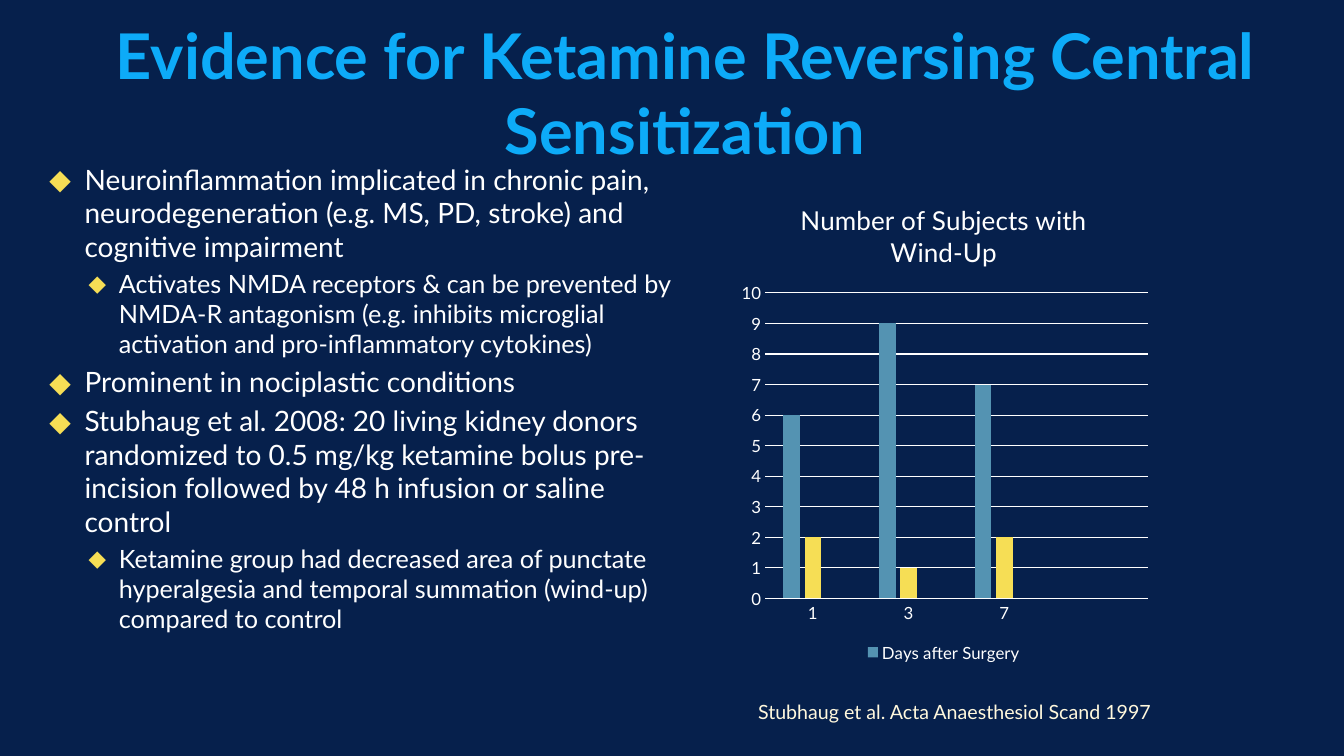
from dataclasses import dataclass

from lxml import etree
from pptx import Presentation
from pptx.chart.data import CategoryChartData
from pptx.dml.color import RGBColor
from pptx.enum import chart as ch, text as tx
from pptx.oxml import parse_xml
from pptx.oxml.ns import nsdecls, qn
from pptx.util import Inches, Pt

FONT = "Lato"
NAVY, SKY, WHITE, CREAM, YELLOW = "06204C", "0DABF8", "FFFFFF", "FFF8DD", "F6DE55"


@dataclass
class Level:
    size: float
    margin: float
    hanging: float
    bullet_pct: int


@dataclass
class Bullet:
    level: int
    text: str


@dataclass
class Series:
    name: str
    values: tuple
    color: str


LEVELS = [Level(20, 0.35, 0.35, 100), Level(18, 0.69, 0.3, 90)]
BULLETS = [
    Bullet(0, "Neuroinflammation implicated in chronic pain, neurodegeneration "
              "(e.g. MS, PD, stroke) and cognitive impairment"),
    Bullet(1, "Activates NMDA receptors & can be prevented by NMDA-R antagonism "
              "(e.g. inhibits microglial activation and pro-inflammatory cytokines)"),
    Bullet(0, "Prominent in nociplastic conditions"),
    Bullet(0, "Stubhaug et al. 2008: 20 living kidney donors randomized to 0.5 mg/kg "
              "ketamine bolus pre-incision followed by 48 h infusion or saline control"),
    Bullet(1, "Ketamine group had decreased area of punctate hyperalgesia and temporal "
              "summation (wind-up) compared to control"),
]
DAYS = ["1", "3", "7", ""]
SERIES = [
    Series("Days after Surgery", (6, 9, 7, None), "5493B2"),
    Series("Series 2", (2, 1, 2, None), YELLOW),
    Series("Series 3", (None,) * 4, "387CEF"),
]


def rgb(color: str) -> RGBColor:
    return RGBColor.from_string(color)


def set_font(font, size: float, color: str = WHITE, bold: bool = False) -> None:
    font.name, font.size, font.bold = FONT, Pt(size), bold
    font.color.rgb = rgb(color)


def write(p, text: str, **fmt) -> None:
    r = p.add_run()
    r.text = text
    set_font(r.font, **fmt)


def add_title(s) -> None:
    sp = s.shapes.title
    sp.left, sp.top, sp.width, sp.height = map(Inches, (0.26, 0.48, 13.07, 0.86))
    tf = sp.text_frame
    tf.word_wrap, tf.auto_size = True, tx.MSO_AUTO_SIZE.NONE
    tf.vertical_anchor = tx.MSO_ANCHOR.MIDDLE
    tf.margin_left = tf.margin_right = 0
    tf.margin_top = tf.margin_bottom = Inches(0.01)
    p = tf.paragraphs[0]
    p.alignment = tx.PP_ALIGN.CENTER
    write(p, "Evidence for Ketamine Reversing Central Sensitization",
          size=45, color=SKY, bold=True)


def set_bullet(p, level: Level) -> None:
    pPr = p._p.get_or_add_pPr()
    pPr.set("marL", str(Inches(level.margin)))
    pPr.set("indent", str(-Inches(level.hanging)))
    color = etree.SubElement(pPr, qn("a:buClr"))
    etree.SubElement(color, qn("a:srgbClr"), val=YELLOW)
    etree.SubElement(pPr, qn("a:buSzPct"), val=str(level.bullet_pct * 1000))
    etree.SubElement(pPr, qn("a:buFont"), typeface=FONT)
    etree.SubElement(pPr, qn("a:buChar"), char="◆")


def add_bullets(s) -> None:
    tf = s.shapes.add_textbox(*map(Inches, (0.39, 1.56, 6.45, 5.36))).text_frame
    tf.word_wrap = True
    for i, bullet in enumerate(BULLETS):
        level = LEVELS[bullet.level]
        p = tf.add_paragraph() if i else tf.paragraphs[0]
        p.level = bullet.level
        if i:
            p.space_before = Pt(level.size * 0.2)
        set_bullet(p, level)
        write(p, bullet.text, size=level.size)


def set_plot_layout(chart, x: float, y: float, w: float, h: float) -> None:
    """Fix the inner plot area, in fractions of the chart."""
    area = chart._chartSpace.chart.plotArea
    for old in area.findall(qn("c:layout")):
        area.remove(old)
    area.insert(0, parse_xml(
        f'<c:layout {nsdecls("c")}><c:manualLayout><c:layoutTarget val="inner"/>'
        '<c:xMode val="edge"/><c:yMode val="edge"/>'
        f'<c:x val="{x}"/><c:y val="{y}"/><c:w val="{w}"/><c:h val="{h}"/>'
        '</c:manualLayout></c:layout>'))


def hide_legend_entries(legend, *indexes: int) -> None:
    position = legend._element.find(qn("c:legendPos"))
    for i in reversed(indexes):
        position.addnext(parse_xml(
            f'<c:legendEntry {nsdecls("c")}><c:idx val="{i}"/>'
            '<c:delete val="1"/></c:legendEntry>'))


def add_chart(s) -> None:
    data = CategoryChartData()
    data.categories = DAYS
    for series in SERIES:
        data.add_series(series.name, series.values)
    chart = s.shapes.add_chart(ch.XL_CHART_TYPE.COLUMN_CLUSTERED,
                               *map(Inches, (7.25, 1.8, 4.22, 4.81)), data).chart
    set_font(chart.font, 10)
    write(chart.chart_title.text_frame.paragraphs[0],
          "Number of Subjects with Wind-Up", size=18.6)
    chart.chart_title.include_in_layout = False
    set_plot_layout(chart, 0.08, 0.23, 0.9, 0.63)

    plot = chart.plots[0]
    plot.gap_width, plot.overlap, plot.vary_by_categories = 219, -27, False
    for drawn, series in zip(plot.series, SERIES):
        drawn.format.fill.solid()
        drawn.format.fill.fore_color.rgb = rgb(series.color)

    days, count = chart.category_axis, chart.value_axis
    for axis in (days, count):
        axis.major_tick_mark = axis.minor_tick_mark = ch.XL_TICK_MARK.NONE
        set_font(axis.tick_labels.font, 12)
    count.minimum_scale, count.maximum_scale, count.major_unit = 0, 10, 1
    count.format.line.fill.background()
    for line in (days.format.line, count.major_gridlines.format.line):
        line.color.rgb, line.width = rgb(WHITE), Pt(0.75)

    chart.has_legend = True
    chart.legend.position = ch.XL_LEGEND_POSITION.BOTTOM
    chart.legend.include_in_layout = False
    set_font(chart.legend.font, 12)
    hide_legend_entries(chart.legend, 1, 2)


def add_citation(s) -> None:
    tf = s.shapes.add_textbox(*map(Inches, (7.42, 6.89, 4.18, 0.34))).text_frame
    tf.word_wrap, tf.auto_size = False, tx.MSO_AUTO_SIZE.SHAPE_TO_FIT_TEXT
    write(tf.paragraphs[0], "Stubhaug et al. Acta Anaesthesiol Scand 1997",
          size=14, color=CREAM)


def main() -> None:
    prs = Presentation()
    prs.slide_width, prs.slide_height = Inches(13.33), Inches(7.5)
    s = prs.slides.add_slide(prs.slide_layouts[5])
    s.background.fill.solid()
    s.background.fill.fore_color.rgb = rgb(NAVY)
    add_title(s)
    add_bullets(s)
    add_chart(s)
    add_citation(s)
    prs.save("out.pptx")


if __name__ == "__main__":
    main()
